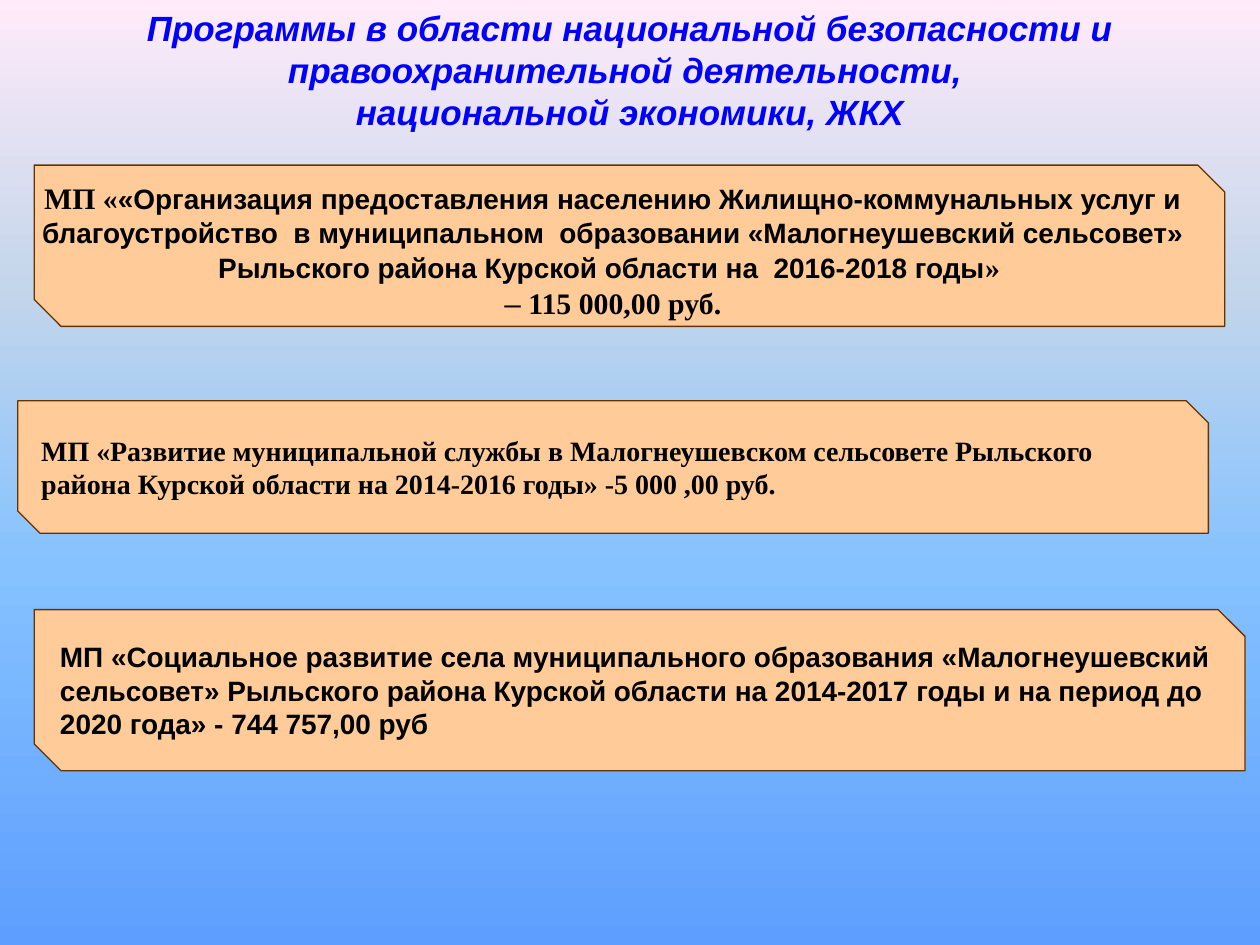
from lxml import etree
from pptx import Presentation
from pptx.dml.color import RGBColor
from pptx.enum.shapes import MSO_SHAPE
from pptx.enum.text import MSO_ANCHOR, PP_ALIGN
from pptx.oxml.ns import qn
from pptx.util import Cm, Pt

SNIP = MSO_SHAPE.SNIP_2_DIAG_RECTANGLE
MIDDLE = MSO_ANCHOR.MIDDLE
LEFT, CENTER = PP_ALIGN.LEFT, PP_ALIGN.CENTER
BLUE = RGBColor(0x00, 0x00, 0xFF)
BLACK = RGBColor(0x00, 0x00, 0x00)
PEACH = RGBColor(0xFF, 0xCC, 0x99)
BROWN = RGBColor(0x66, 0x33, 0x00)
SKY = [
    (0, RGBColor(0xFF, 0xEB, 0xFA)),
    (30, RGBColor(0xC4, 0xD6, 0xEB)),
    (60, RGBColor(0x85, 0xC2, 0xFF)),
    (100, RGBColor(0x5E, 0x9E, 0xFF)),
]
SANS, SERIF = "Arial", "Times New Roman"


def style(font, name, size, color=BLACK, bold=True):
    font.name, font.size, font.bold = name, Pt(size), bold
    font.color.rgb = color


def add_text(left, top, width, height, inset=0.13):
    frame = slide.shapes.add_textbox(
        Cm(left), Cm(top), Cm(width), Cm(height)).text_frame
    frame.word_wrap = True
    frame.margin_left = frame.margin_right = Cm(0.25)
    frame.margin_top, frame.margin_bottom = Cm(inset), Cm(0.13)
    return frame


prs = Presentation()
prs.slide_width, prs.slide_height = Cm(25.4), Cm(19.05)
slide = prs.slides.add_slide(prs.slide_layouts[6])

# Background: four colours running from top to bottom
fill = slide.background.fill
fill.gradient()
grad = slide.background._cSld.find(".//" + qn("a:gradFill"))
stops = grad.find(qn("a:gsLst"))
for stop in list(stops):
    stops.remove(stop)
for pos, color in SKY:
    stop = etree.SubElement(stops, qn("a:gs"), pos=str(pos * 1000))
    etree.SubElement(stop, qn("a:srgbClr"), val=str(color))
grad.find(qn("a:lin")).set("ang", "5400000")

# Title
title = add_text(0, 0, 25.4, 3.15)
title.text = (
    "Программы в области национальной безопасности и "
    "правоохранительной деятельности, \n"
    "национальной экономики, ЖКХ"
)
for para in title.paragraphs:
    para.alignment = CENTER
    style(para.font, SANS, 20, BLUE)
    para.font.italic = True

# Programme cards: left, top, width, height, font, text
cards = [
    (0.69, 3.33, 24, 3.25, SANS, ""),
    (0.36, 8.08, 24, 2.67, SERIF,
     "МП «Развитие муниципальной службы в Малогнеушевском сельсовете "
     "Рыльского района Курской области на 2014-2016 годы» -5 000 ,00 руб."),
    (0.69, 12.29, 24.41, 3.25, SANS,
     "МП «Социальное развитие села муниципального образования "
     "«Малогнеушевский сельсовет» Рыльского района Курской области на "
     "2014-2017 годы и на период до 2020 года» - 744 757,00 руб"),
]
for left, top, width, height, face, text in cards:
    card = slide.shapes.add_shape(
        SNIP, Cm(left), Cm(top), Cm(width), Cm(height))
    card.shadow.inherit = False
    card.fill.solid()
    card.fill.fore_color.rgb = PEACH
    card.line.color.rgb = BROWN
    card.line.width = Pt(0.75)
    if text:
        frame = card.text_frame
        frame.text = text
        frame.word_wrap = True
        frame.vertical_anchor = MIDDLE
        para = frame.paragraphs[0]
        para.alignment = LEFT
        style(para.font, face, 16)

# Text over the first card: runs of text, font, size, bold
lines = [
    [("МП «", SERIF, 17, True),
     ("«Организация предоставления населению Жилищно-коммунальных услуг и "
      "благоустройство  в муниципальном  образовании «Малогнеушевский "
      "сельсовет» Рыльского района Курской области на  2016-2018 годы",
      SANS, 16, True),
     ("» ", SERIF, 17, True)],
    [("–", SANS, 17, False), (" 115 000,00 руб.", SERIF, 17, True)],
]
frame = add_text(0, 3.33, 24.71, 3.25, inset=0.29)
paras = [frame.paragraphs[0], frame.add_paragraph()]
for para, runs in zip(paras, lines):
    para.alignment = CENTER
    for text, face, size, bold in runs:
        run = para.add_run()
        run.text = text
        style(run.font, face, size, bold=bold)

prs.save("out.pptx")
